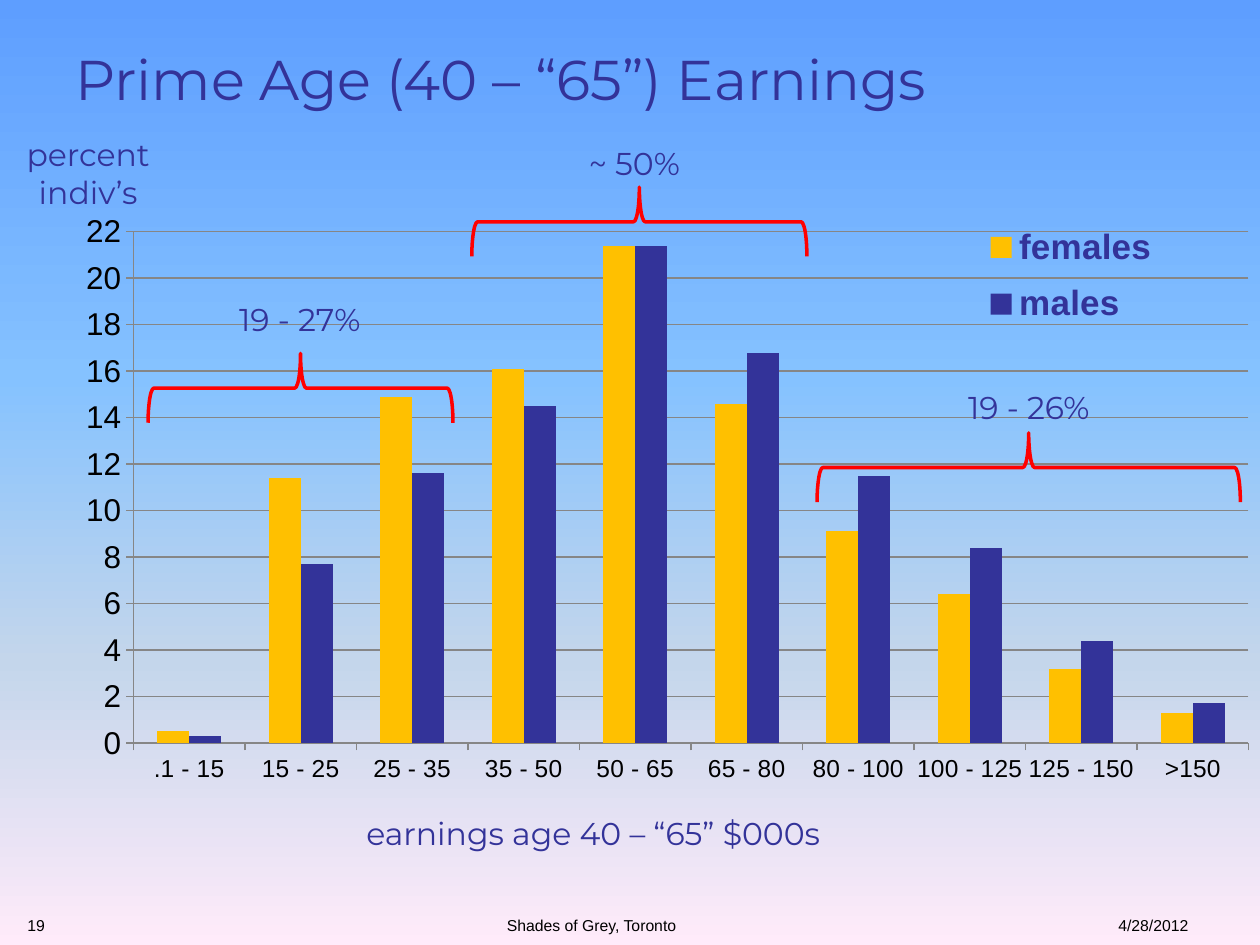
from typing import NamedTuple

from lxml import etree
from pptx import Presentation
from pptx.chart.data import CategoryChartData
from pptx.dml.color import RGBColor
from pptx.enum.chart import XL_CHART_TYPE, XL_LEGEND_POSITION, XL_TICK_MARK
from pptx.enum.shapes import MSO_SHAPE
from pptx.enum.text import MSO_ANCHOR, PP_ALIGN
from pptx.oxml import parse_xml
from pptx.oxml.ns import nsdecls, qn
from pptx.util import Inches, Pt

LEFT, CENTER, RIGHT = PP_ALIGN.LEFT, PP_ALIGN.CENTER, PP_ALIGN.RIGHT
TOP = MSO_ANCHOR.TOP
OUTSIDE = XL_TICK_MARK.OUTSIDE
NAVY = RGBColor(0x33, 0x33, 0x99)
GOLD = RGBColor(0xFF, 0xC0, 0x00)
RED = RGBColor(0xFF, 0x00, 0x00)
GRAY = RGBColor(0x86, 0x86, 0x86)
BLACK = RGBColor(0x00, 0x00, 0x00)
SKY = [(0, "5E9EFF"), (40, "85C2FF"), (70, "C4D6EB"), (100, "FFEBFA")]


class Label(NamedTuple):
    text: str
    box: tuple[float, float, float, float]
    align: PP_ALIGN = CENTER


class Brace(NamedTuple):
    left: float
    top: float
    height: float


LABELS = [
    Label("earnings age 40 – “65” $000s", (2.81, 6.41, 4.53, 0.4), LEFT),
    Label("percent indiv’s", (-0.08, 1.02, 1.56, 0.71)),
    Label("~ 50%", (4.45, 1.09, 1.17, 0.4)),
    Label("19 - 26%", (7.19, 3.03, 1.95, 0.4)),
    Label("19 - 27%", (1.52, 2.33, 1.72, 0.4)),
]
FOOTERS = [
    Label("4/28/2012", (7.2, 7.22, 2.33, 0.28), RIGHT),
    Label("Shades of Grey, Toronto", (3.11, 7.22, 3.17, 0.28)),
    Label("19", (0.12, 7.22, 1.66, 0.28), LEFT),
]
BRACES = [Brace(4.8, 0.43, 2.66), Brace(7.89, 2.03, 3.36), Brace(2.11, 1.87, 2.42)]
BRACE_WIDTH = 0.55

CATEGORIES = [".1 - 15", "15 - 25", "25 - 35", "35 - 50", "50 - 65", "65 - 80",
              "80 - 100", "100 - 125", "125 - 150", ">150"]
SERIES = [
    ("females", GOLD, [0.5, 11.4, 14.9, 16.1, 21.4, 14.6, 9.1, 6.4, 3.2, 1.3]),
    ("males", NAVY, [0.3, 7.7, 11.6, 14.5, 21.4, 16.8, 11.5, 8.4, 4.4, 1.7]),
]


def set_font(font, *, size: float, color: RGBColor, name: str = "Arial",
             bold: bool = False) -> None:
    font.size, font.name, font.bold = Pt(size), name, bold
    font.color.rgb = color


def write(tf, text: str, *, size: float = 18, color: RGBColor = NAVY,
          name: str = "Montserrat", align: PP_ALIGN = LEFT) -> None:
    tf.word_wrap = True
    tf.vertical_anchor = TOP
    p = tf.paragraphs[0]
    p.alignment = align
    r = p.add_run()
    r.text = text
    set_font(r.font, size=size, color=color, name=name)


def add_label(s, label: Label, **fmt) -> None:
    tb = s.shapes.add_textbox(*map(Inches, label.box))
    write(tb.text_frame, label.text, align=label.align, **fmt)


def add_brace(s, brace: Brace) -> None:
    sp = s.shapes.add_shape(MSO_SHAPE.RIGHT_BRACE, Inches(brace.left), Inches(brace.top),
                            Inches(BRACE_WIDTH), Inches(brace.height))
    sp.rotation = 270
    sp.shadow.inherit = False
    sp.fill.background()
    sp.line.color.rgb = RED
    sp.line.width = Pt(2)


def set_background(s) -> None:
    stops = "".join(f'<a:gs pos="{pos * 1000}"><a:srgbClr val="{color}"/></a:gs>'
                    for pos, color in SKY)
    bg = parse_xml(f'<p:bg {nsdecls("p", "a")}><p:bgPr><a:gradFill><a:gsLst>{stops}</a:gsLst>'
                   '<a:lin ang="5400000" scaled="0"/></a:gradFill><a:effectLst/></p:bgPr></p:bg>')
    s.element.cSld.insert(0, bg)


def set_layout(element, x: float, y: float, w: float, h: float, inner: bool = False) -> None:
    """Place a plot area or legend by fractions of the chart."""
    for old in element.findall(qn("c:layout")):
        element.remove(old)
    layout = etree.Element(qn("c:layout"))
    manual = etree.SubElement(layout, qn("c:manualLayout"))
    values = {"xMode": "edge", "yMode": "edge", "x": x, "y": y, "w": w, "h": h}
    if inner:
        values = {"layoutTarget": "inner"} | values
    for tag, value in values.items():
        etree.SubElement(manual, qn(f"c:{tag}")).set("val", str(value))
    position = element.find(qn("c:legendPos"))
    element.insert(0 if position is None else 1, layout)


def add_earnings_chart(s) -> None:
    data = CategoryChartData(number_format="0.0")
    data.categories = CATEGORIES
    for name, _, values in SERIES:
        data.add_series(name, values)
    chart = s.shapes.add_chart(XL_CHART_TYPE.COLUMN_CLUSTERED, Inches(0), Inches(1.56),
                               Inches(10), Inches(5.47), data).chart
    chart.has_title = False
    set_font(chart.font, size=10, color=BLACK)

    # Columns
    plot = chart.plots[0]
    plot.gap_width, plot.overlap = 150, 0
    plot.vary_by_categories = False
    for series, (_, color, _) in zip(plot.series, SERIES):
        series.format.fill.solid()
        series.format.fill.fore_color.rgb = color

    # Axes
    for axis, size in ((chart.category_axis, 14), (chart.value_axis, 18)):
        axis.major_tick_mark = OUTSIDE
        axis.format.line.color.rgb = GRAY
        set_font(axis.tick_labels.font, size=size, color=BLACK)
    value_axis = chart.value_axis
    value_axis.minimum_scale, value_axis.maximum_scale = 0, 22
    value_axis.major_unit = 2
    value_axis.major_gridlines.format.line.color.rgb = GRAY
    value_axis.tick_labels.number_format = "0"
    value_axis.tick_labels.number_format_is_linked = False

    # Legend over the plot
    chart.has_legend = True
    legend = chart.legend
    legend.position = XL_LEGEND_POSITION.RIGHT
    legend.include_in_layout = False
    set_font(legend.font, size=20, color=NAVY, bold=True)
    legend_xml = chart.element.find(f".//{qn('c:legend')}")
    set_layout(legend_xml, 0.75, 0.02, 0.2, 0.19)
    set_layout(chart.element.find(f".//{qn('c:plotArea')}"), 0.106, 0.051, 0.885, 0.742, inner=True)


def main() -> None:
    prs = Presentation()
    prs.slide_width, prs.slide_height = Inches(10), Inches(7.5)
    s = prs.slides.add_slide(prs.slide_layouts[5])
    set_background(s)

    # Title
    title = s.shapes.title
    title.left, title.top, title.width, title.height = map(Inches, (0.5, 0.3, 9, 1.25))
    write(title.text_frame, "Prime Age (40 – “65”) Earnings", size=32)

    # Chart with its annotations
    add_earnings_chart(s)
    for brace in BRACES:
        add_brace(s, brace)
    for label in LABELS:
        add_label(s, label)

    # Footer
    for footer in FOOTERS:
        add_label(s, footer, size=9, color=BLACK, name="Arial")

    prs.save("out.pptx")


if __name__ == "__main__":
    main()
